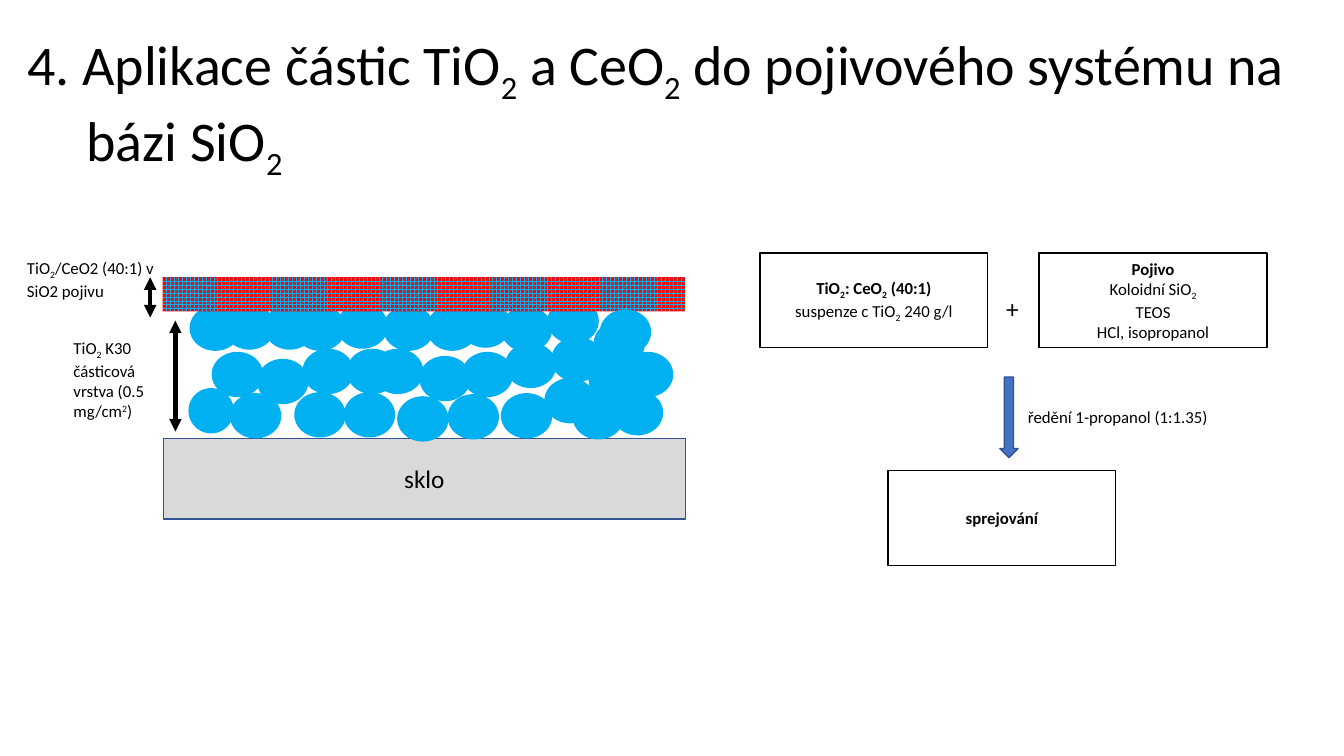
from lxml.etree import SubElement
from pptx import Presentation
from pptx.dml.color import RGBColor
from pptx.enum.dml import MSO_PATTERN
from pptx.enum.shapes import MSO_CONNECTOR, MSO_SHAPE
from pptx.enum.text import MSO_ANCHOR, MSO_AUTO_SIZE, PP_ALIGN
from pptx.oxml.ns import qn
from pptx.util import Pt

BLACK, PARTICLE, OUTLINE = "000000", "00B0F0", "325491"
SUB, SUP = ("2", -25), ("2", 30)


def rgb(value):
    return RGBColor.from_string(value)


def add_runs(p, pieces, size, bold=False):
    """Add one run per piece; a (text, percent) piece is raised or lowered."""
    for piece in pieces:
        text, shift = (piece, 0) if isinstance(piece, str) else piece
        r = p.add_run()
        r.text = text
        r.font.name = "Calibri"
        r.font.size = Pt(size)
        r.font.bold = bold
        r.font.color.rgb = rgb(BLACK)
        if shift:
            r._r.get_or_add_rPr().set("baseline", str(shift * 1000))


prs = Presentation()
prs.slide_width, prs.slide_height = Pt(960), Pt(540)
slide = prs.slides.add_slide(prs.slide_layouts[5])

# Title with a hanging indent
title = slide.shapes.title
title.left, title.top, title.width, title.height = Pt(12.2), Pt(17.3), Pt(937.4), Pt(104.4)
tf = title.text_frame
tf.word_wrap = True
tf.auto_size = MSO_AUTO_SIZE.NONE
tf.vertical_anchor = MSO_ANCHOR.TOP
p = tf.paragraphs[0]
p.alignment = PP_ALIGN.LEFT
pPr = p._p.get_or_add_pPr()
pPr.set("marL", str(Pt(42.5)))
pPr.set("indent", str(-Pt(42.5)))
add_runs(p, ["4. Aplikace částic TiO", SUB, " a CeO", SUB,
             " do pojivového systému na bázi SiO", SUB], 40)

# Layer diagram: glass, particles, binder coating
diagram = slide.shapes.add_group_shape().shapes
glass = diagram.add_shape(MSO_SHAPE.RECTANGLE, Pt(116.6), Pt(313.2), Pt(373), Pt(57.6))
glass.shadow.inherit = False
glass.fill.solid()
glass.fill.fore_color.rgb = rgb("D9D9D9")
glass.line.color.rgb = rgb(OUTLINE)
glass.line.width = Pt(1)
glass.text_frame.vertical_anchor = MSO_ANCHOR.MIDDLE
p = glass.text_frame.paragraphs[0]
p.alignment = PP_ALIGN.CENTER
add_runs(p, ["sklo"], 18)

bottom_row = [(134.6, 277.2), (164.2, 280.8), (210.2, 280.1), (245.5, 280.1), (283.7, 283),
              (319.7, 281.5), (357.8, 280.8), (388.8, 270), (409, 281.5), (437, 278.6)]
middle_row = [(151.2, 251.3), (183.6, 256.3), (216, 249.1), (247.7, 249.1), (265.7, 249.1),
              (299.5, 254.2), (329.8, 251.3), (360.7, 244.8), (393.8, 240.5),
              (420.5, 255.6), (444.2, 251.3)]
top_row = [(135.4, 218.2), (159.8, 217.4), (188.6, 217.4), (210.2, 218.2), (240.5, 216.7),
           (273.6, 218.2), (304.6, 218.2), (328.3, 216), (357.8, 218.9), (391, 213.1),
           (424.1, 229), (428.4, 221)]
for x, y in bottom_row + middle_row + top_row:
    width = 32.4 if (x, y) == bottom_row[0] else 36.7
    particle = diagram.add_shape(MSO_SHAPE.OVAL, Pt(x), Pt(y), Pt(width), Pt(32.4))
    particle.shadow.inherit = False
    particle.fill.solid()
    particle.fill.fore_color.rgb = rgb(PARTICLE)
    particle.line.fill.background()
    if (x, y) == top_row[-2]:
        # The last particle lies in front of the coating
        coating = diagram.add_shape(MSO_SHAPE.RECTANGLE, Pt(116.2), Pt(198), Pt(373), Pt(24.5))
        coating.shadow.inherit = False
        coating.fill.patterned()
        coating.fill.pattern = MSO_PATTERN.SPHERE
        coating.fill.fore_color.rgb = rgb(PARTICLE)
        coating.fill.back_color.rgb = rgb("FF0000")
        coating.line.fill.background()

# Thickness arrows
for x, top, bottom in [(125.3, 229, 308.2), (107.3, 198, 226.8)]:
    arrow = diagram.add_connector(MSO_CONNECTOR.STRAIGHT, Pt(x), Pt(top), Pt(x), Pt(bottom))
    arrow.line.color.rgb = rgb(BLACK)
    arrow.line.width = Pt(3)
    ln = arrow.line._get_or_add_ln()
    for end in ("a:headEnd", "a:tailEnd"):
        SubElement(ln, qn(end)).set("type", "triangle")
    SubElement(arrow._element.spPr, qn("a:effectLst"))

# Labels: parent, left, top, width, height, side inset, wrap, size, pieces
labels = [
    (diagram, 45.4, 237.6, 66.2, 79.9, 7.2, True, 12,
     ["TiO", SUB, " K30 částicová vrstva (0.5 mg/cm", SUP, ")"]),
    (diagram, 12.2, 180.7, 111.6, 36, 7.2, True, 12,
     ["TiO", SUB, "/CeO2 (40:1) v SiO2 pojivu"]),
    (slide.shapes, 718.6, 205.9, 9, 29, 0, False, 18, ["+"]),
    (slide.shapes, 727.2, 287.3, 144, 21.6, 7.2, False, 12, ["ředění 1-propanol (1:1.35)"]),
]
for parent, x, y, w, h, inset, wrap, size, pieces in labels:
    tf = parent.add_textbox(Pt(x), Pt(y), Pt(w), Pt(h)).text_frame
    tf.word_wrap = wrap
    tf.auto_size = MSO_AUTO_SIZE.SHAPE_TO_FIT_TEXT
    tf.margin_left = tf.margin_right = Pt(inset)
    add_runs(tf.paragraphs[0], pieces, size)

# Process boxes: the first line of each is bold
boxes = [
    (542.9, 180.7, [["TiO", SUB, ": CeO", SUB, " (40:1)"],
                    ["suspenze c TiO", SUB, " 240 g/l"]]),
    (742.3, 180.7, [["Pojivo"], ["Koloidní SiO", SUB], ["TEOS"], ["HCl, isopropanol"]]),
    (634.3, 336.2, [["sprejování"]]),
]
for x, y, lines in boxes:
    box = slide.shapes.add_shape(MSO_SHAPE.RECTANGLE, Pt(x), Pt(y), Pt(162.7), Pt(67.7))
    box.shadow.inherit = False
    box.fill.background()
    box.line.color.rgb = rgb(BLACK)
    box.line.width = Pt(1)
    tf = box.text_frame
    tf.vertical_anchor = MSO_ANCHOR.MIDDLE
    for i, pieces in enumerate(lines):
        p = tf.add_paragraph() if i else tf.paragraphs[0]
        p.alignment = PP_ALIGN.CENTER
        add_runs(p, pieces, 12, bold=i == 0)

dilution = slide.shapes.add_shape(MSO_SHAPE.DOWN_ARROW, Pt(714.2), Pt(269.3), Pt(13), Pt(57.6))
dilution.shadow.inherit = False
dilution.fill.solid()
dilution.fill.fore_color.rgb = rgb("4472C4")
dilution.line.color.rgb = rgb(OUTLINE)
dilution.line.width = Pt(1)

prs.save("out.pptx")
